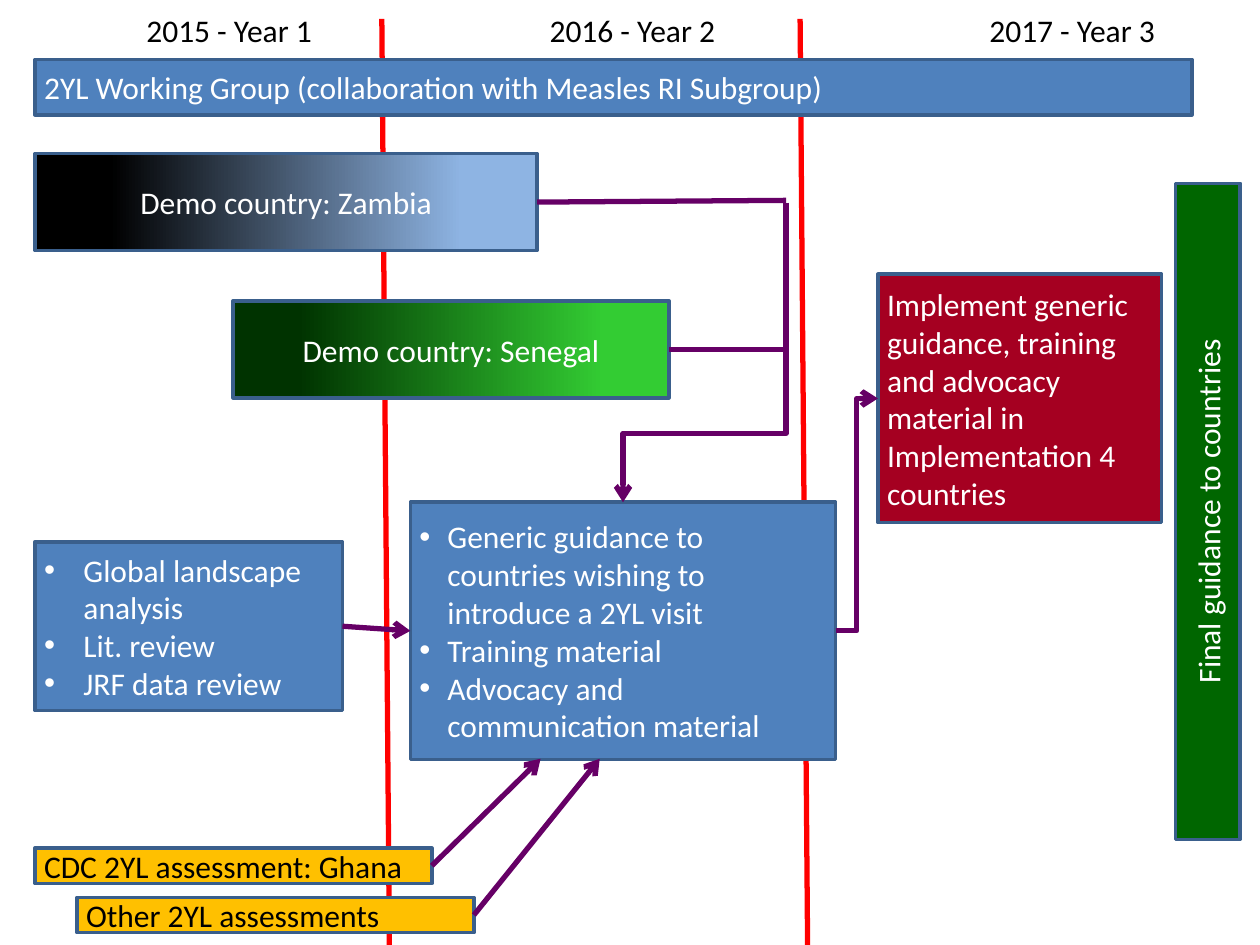
import pptx
import pptx.util
import pptx.dml.color
import pptx.enum.shapes
import pptx.enum.text
import pptx.oxml.ns
import lxml.etree

Pt = pptx.util.Pt
RGBColor = pptx.dml.color.RGBColor
Kind = pptx.enum.shapes.MSO_CONNECTOR
Align = pptx.enum.text.PP_ALIGN
qn = pptx.oxml.ns.qn

WHITE = RGBColor(0xFF, 0xFF, 0xFF)
BLACK = RGBColor(0, 0, 0)
RED = RGBColor(0xFF, 0, 0)
BLUE = RGBColor(0x4F, 0x81, 0xBD)
EDGE = RGBColor(0x3A, 0x5F, 0x8C)
SKY = RGBColor(0x8E, 0xB4, 0xE3)
PINE = RGBColor(0, 0x33, 0)
LIME = RGBColor(0x33, 0xCC, 0x33)
GREEN = RGBColor(0, 0x66, 0)
AMBER = RGBColor(0xFF, 0xC0, 0)
WINE = RGBColor(0xA5, 0, 0x21)
PLUM = RGBColor(0x66, 0, 0x66)


def write(frame, text, color=WHITE, size=18, face="Calibri", align=Align.LEFT,
          wrap=True, hang=0):
    frame.word_wrap = wrap
    frame.margin_left = frame.margin_right = Pt(5.2)
    frame.margin_top = frame.margin_bottom = Pt(2.6)
    frame.vertical_anchor = pptx.enum.text.MSO_ANCHOR.MIDDLE
    frame.text = text
    for para in frame.paragraphs:
        para.alignment = align
        if hang:
            props = para._p.get_or_add_pPr()
            props.set("marL", str(Pt(hang)))
            props.set("indent", str(-Pt(hang)))
            lxml.etree.SubElement(props, qn("a:buFont")).set("typeface", "Arial")
            lxml.etree.SubElement(props, qn("a:buChar")).set("char", "•")
        para.font.name = face
        para.font.size = Pt(size)
        para.font.color.rgb = color


class Board:
    def __init__(self, slide, edge=EDGE, flow=PLUM, width=3):
        self.slide = slide
        self.edge = edge
        self.flow = flow
        self.width = width

    def label(self, text, left, top, width, height):
        box = self.slide.shapes.add_textbox(Pt(left), Pt(top), Pt(width), Pt(height))
        write(box.text_frame, text, color=BLACK, wrap=False)
        box.text_frame.vertical_anchor = pptx.enum.text.MSO_ANCHOR.TOP
        box.text_frame.auto_size = pptx.enum.text.MSO_AUTO_SIZE.SHAPE_TO_FIT_TEXT

    def box(self, text, left, top, width, height, fill=BLUE, fade=None, turn=0, **style):
        box = self.slide.shapes.add_shape(
            pptx.enum.shapes.MSO_SHAPE.RECTANGLE,
            Pt(left), Pt(top), Pt(width), Pt(height))
        box.shadow.inherit = False
        box.rotation = turn
        if fade:
            box.fill.gradient()
            box.fill.gradient_angle = 0
            for stop, place, color in zip(box.fill.gradient_stops, (0.15, 0.85), (fill, fade)):
                stop.position = place
                stop.color.rgb = color
        else:
            box.fill.solid()
            box.fill.fore_color.rgb = fill
        box.line.color.rgb = self.edge
        box.line.width = Pt(2)
        write(box.text_frame, text, **style)
        return box

    def line(self, start, end, color=None, kind=Kind.STRAIGHT, arrow=False,
             begin=None, finish=None):
        line = self.slide.shapes.add_connector(kind, *map(Pt, start + end))
        line.line.color.rgb = color or self.flow
        line.line.width = Pt(self.width)
        if arrow:
            stroke = line.line._get_or_add_ln()
            lxml.etree.SubElement(stroke, qn("a:tailEnd")).set("type", "arrow")
        lxml.etree.SubElement(line._element.spPr, qn("a:effectLst"))
        if begin:
            line.begin_connect(*begin)
        if finish:
            line.end_connect(*finish)
        return line

    def drop(self, start, end, bend):
        across, down = end[0] - start[0], end[1] - start[1]
        mid = (start[0] + end[0]) / 2, (start[1] + end[1]) / 2
        half = down / 2, -across / 2
        line = self.line((mid[0] - half[0], mid[1] - half[1]),
                         (mid[0] + half[0], mid[1] + half[1]),
                         kind=Kind.ELBOW, arrow=True)
        line._element.spPr.find(qn("a:xfrm")).set("rot", "5400000")
        shape = line._element.spPr.find(qn("a:prstGeom"))
        guides = shape.find(qn("a:avLst"))
        if guides is None:
            guides = lxml.etree.SubElement(shape, qn("a:avLst"))
        guide = lxml.etree.SubElement(guides, qn("a:gd"))
        guide.set("name", "adj1")
        guide.set("fmla", f"val {round(bend * 100000)}")


def main():
    deck = pptx.Presentation()
    deck.slide_width, deck.slide_height = Pt(720), Pt(540)
    board = Board(deck.slides.add_slide(deck.slide_layouts[6]))

    for left in (457.2, 218.2):
        board.line((left, 10.8), (left + 4.3, 540), color=RED)
    for year, left in enumerate((78.5, 308.9, 560.2)):
        board.label(f"{2015 + year} - Year {year + 1}", left, 3.6, 105.8, 27.4)

    sen = board.box("Demo country: Senegal", 133.2, 172, 249.1, 55.4,
                    fill=PINE, fade=LIME, align=Align.CENTER)
    zam = board.box("Demo country: Zambia", 20, 87.8, 287, 55.4,
                    fill=BLACK, fade=SKY, align=Align.CENTER)
    guide = board.box("Generic guidance to countries wishing to introduce a 2YL visit\n"
                      "Training material\nAdvocacy and communication material",
                      234.5, 287, 243, 147, hang=16)
    review = board.box("Global landscape analysis\nLit. review\nJRF data review",
                       20, 309.6, 175.7, 96.5, hang=22.5)
    ghana = board.box("CDC 2YL assessment: Ghana", 20, 484.6, 226.8, 20.2,
                      fill=AMBER, color=BLACK)
    other = board.box("Other 2YL assessments", 44, 512.8, 226.8, 20.2,
                      fill=AMBER, color=BLACK)
    board.box("2YL Working Group (collaboration with Measles RI Subgroup)",
              20, 34, 661, 31.7)

    board.line((195.7, 358), (234.5, 360.5), arrow=True,
               begin=(review, 3), finish=(guide, 1))
    board.drop((449.2, 115.8), (356, 287), 0.77)
    board.line((246.8, 494.7), (308.9, 433.6), arrow=True, begin=(ghana, 3))
    board.line((270.8, 522.9), (342.7, 433.6), arrow=True, begin=(other, 3))
    board.line((307, 115.5), (449.2, 114.5), begin=(zam, 3))
    board.line((450, 199.7), (382.3, 199.7), finish=(sen, 3))

    board.box("Implement generic guidance, training and advocacy material in "
              "Implementation 4 countries", 501.7, 156.7, 162, 142, fill=WINE)
    board.line((477.5, 360.5), (501.7, 227.7), kind=Kind.ELBOW, arrow=True)
    board.box("Final guidance to countries", 502.7, 273.7, 375, 37,
              fill=GREEN, turn=270, align=Align.CENTER)

    deck.save("out.pptx")


if __name__ == "__main__":
    main()
